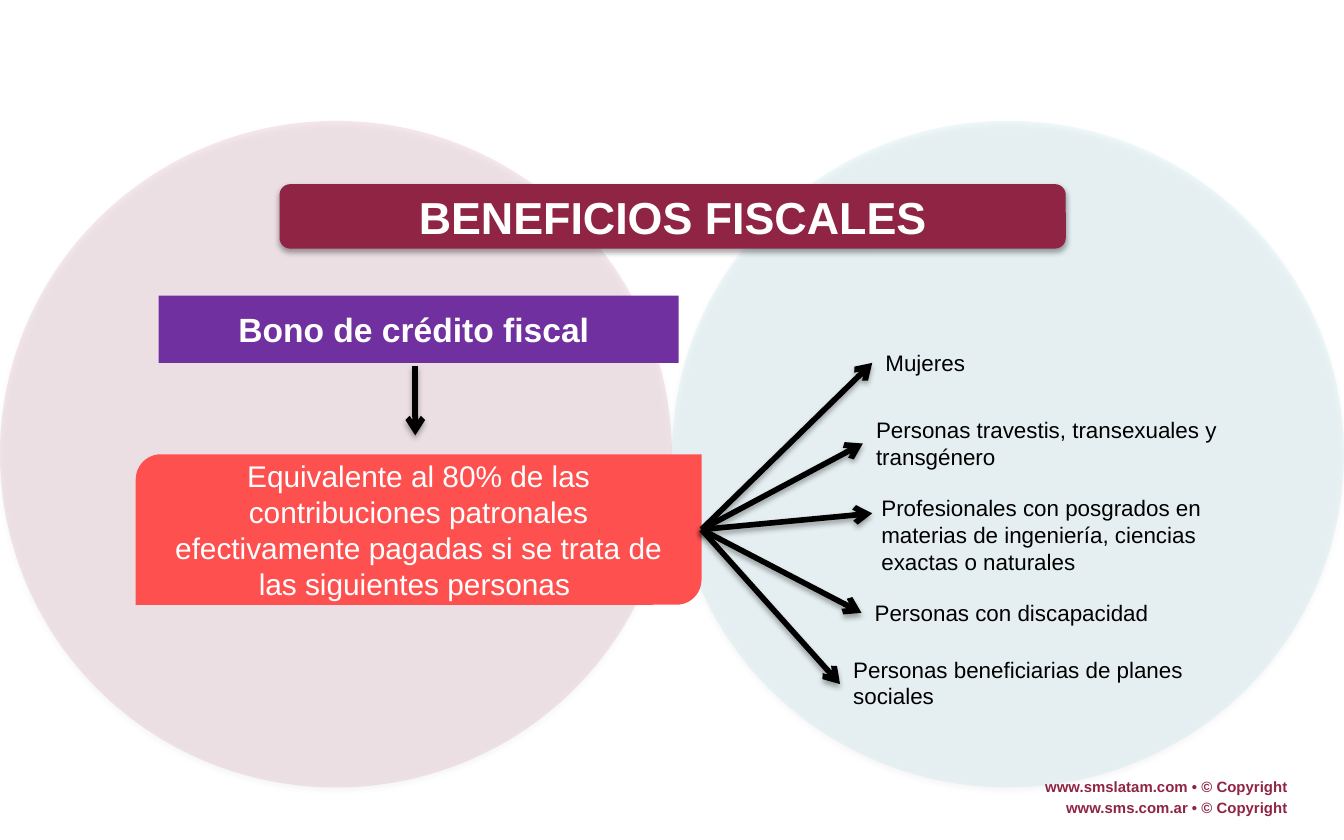
from dataclasses import dataclass
from typing import Optional

from lxml import etree
from pptx import Presentation
from pptx.dml.color import RGBColor
from pptx.enum.shapes import MSO_CONNECTOR, MSO_SHAPE
from pptx.enum.text import MSO_ANCHOR, PP_ALIGN
from pptx.oxml.ns import qn
from pptx.util import Pt

PX = 9144
STRAIGHT = MSO_CONNECTOR.STRAIGHT
ELLIPSE = MSO_SHAPE.OVAL
RECTANGLE = MSO_SHAPE.RECTANGLE
ROUNDED = MSO_SHAPE.ROUNDED_RECTANGLE
DIAGONAL = MSO_SHAPE.ROUND_2_DIAG_RECTANGLE
LEFT, CENTER, RIGHT = PP_ALIGN.LEFT, PP_ALIGN.CENTER, PP_ALIGN.RIGHT
TOP, MIDDLE = MSO_ANCHOR.TOP, MSO_ANCHOR.MIDDLE


@dataclass(frozen=True)
class Theme:
    font: str = "Arial"
    white: str = "FFFFFF"
    black: str = "000000"
    wine: str = "902444"
    purple: str = "7030A0"
    coral: str = "FF5050"
    rose: str = "A4244A"
    aqua: str = "61C1D1"
    title_size: int = 24
    heading_size: int = 18
    body_size: int = 16
    item_size: int = 12
    footer_size: int = 8
    arrow_width: int = 3


THEME = Theme()


@dataclass(frozen=True)
class Box:
    left: int
    top: int
    width: int
    height: int

    def emu(self) -> tuple[int, ...]:
        return tuple(v * PX for v in (self.left, self.top, self.width, self.height))


@dataclass(frozen=True)
class Shadow:
    opacity: int
    distance: float
    blur: float = 3.1


@dataclass(frozen=True)
class Panel:
    kind: int
    box: Box
    color: str
    opacity: int = 100
    shadow: Optional[Shadow] = None
    text: str = ""
    size: int = 0
    bold: bool = False


@dataclass(frozen=True)
class Beneficiary:
    text: str
    box: Box
    arrow_end: tuple[int, int]


CIRCLE_SHADOW = Shadow(38, 1.6)
RAISED_SHADOW = Shadow(35, 1.8)
HUB = (522, 394)

PANELS = [
    Panel(ELLIPSE, Box(0, 90, 500, 496), THEME.rose, 10, CIRCLE_SHADOW),
    Panel(ELLIPSE, Box(500, 90, 500, 496), THEME.aqua, 10, CIRCLE_SHADOW),
    Panel(RECTANGLE, Box(118, 220, 387, 50), THEME.purple,
          text="Bono de crédito fiscal ", size=THEME.heading_size, bold=True),
    Panel(ROUNDED, Box(208, 137, 585, 48), THEME.wine, shadow=RAISED_SHADOW,
          text="BENEFICIOS FISCALES", size=THEME.title_size, bold=True),
    Panel(DIAGONAL, Box(101, 338, 421, 112), THEME.coral,
          text="Equivalente al 80% de las contribuciones patronales efectivamente "
               "pagadas si se trata de las siguientes personas ",
          size=THEME.body_size),
]

BENEFICIARIES = [
    Beneficiary("Mujeres", Box(649, 255, 213, 30), (649, 270)),
    Beneficiary("Personas travestis, transexuales y transgénero",
                Box(642, 305, 333, 50), (642, 330)),
    Beneficiary("Profesionales con posgrados en materias de ingeniería, "
                "ciencias exactas o naturales",
                Box(646, 363, 313, 71), (649, 382)),
    Beneficiary("Personas con discapacidad", Box(641, 441, 313, 30), (641, 456)),
    Beneficiary("Personas beneficiarias de planes sociales",
                Box(625, 483, 313, 50), (625, 509)),
]

FOOTERS = ["www.smslatam.com • © Copyright", "www.sms.com.ar • © Copyright"]


def add_alpha(color_element, opacity: int) -> None:
    etree.SubElement(color_element, qn("a:alpha"), val=str(opacity * 1000))


def add_shadow(properties, shadow: Optional[Shadow]) -> None:
    effects = etree.SubElement(properties, qn("a:effectLst"))
    if shadow:
        outer = etree.SubElement(
            effects, qn("a:outerShdw"), blurRad=str(int(Pt(shadow.blur))),
            dist=str(int(Pt(shadow.distance))), dir="5400000", rotWithShape="0")
        color = etree.SubElement(outer, qn("a:srgbClr"), val=THEME.black)
        add_alpha(color, shadow.opacity)


def write(frame, text: str, *, size: int, color: str, bold: bool = False,
          align: int = LEFT, anchor: int = TOP) -> None:
    frame.word_wrap = True
    frame.vertical_anchor = anchor
    paragraph = frame.paragraphs[0]
    paragraph.alignment = align
    run = paragraph.add_run()
    run.text = text
    run.font.name = THEME.font
    run.font.size = Pt(size)
    run.font.bold = bold
    run.font.color.rgb = RGBColor.from_string(color)


def draw_panel(slide, panel: Panel) -> None:
    shape = slide.shapes.add_shape(panel.kind, *panel.box.emu())
    shape.fill.solid()
    shape.fill.fore_color.rgb = RGBColor.from_string(panel.color)
    shape.line.fill.background()
    properties = shape.element.spPr
    if panel.opacity < 100:
        add_alpha(properties.find(qn("a:solidFill"))[0], panel.opacity)
    add_shadow(properties, panel.shadow)
    if panel.text:
        write(shape.text_frame, panel.text, size=panel.size, color=THEME.white,
              bold=panel.bold, align=CENTER, anchor=MIDDLE)


def draw_arrow(slide, start: tuple[int, int], end: tuple[int, int]) -> None:
    arrow = slide.shapes.add_connector(STRAIGHT, *(v * PX for v in start + end))
    arrow.line.width = Pt(THEME.arrow_width)
    arrow.line.color.rgb = RGBColor.from_string(THEME.black)
    properties = arrow.element.spPr
    etree.SubElement(properties.find(qn("a:ln")), qn("a:tailEnd"), type="arrow")
    add_shadow(properties, RAISED_SHADOW)


def draw_text(slide, text: str, box: Box, **style) -> None:
    write(slide.shapes.add_textbox(*box.emu()).text_frame, text, **style)


def main() -> None:
    deck = Presentation()
    deck.slide_width, deck.slide_height = 1000 * PX, 625 * PX
    slide = deck.slides.add_slide(deck.slide_layouts[6])
    for row, footer in enumerate(FOOTERS):
        draw_text(slide, footer, Box(754, 574 + 15 * row, 214, 24),
                  size=THEME.footer_size, color=THEME.wine, bold=True, align=RIGHT)
    for panel in PANELS:
        draw_panel(slide, panel)
    draw_arrow(slide, (309, 272), (309, 324))
    for beneficiary in BENEFICIARIES:
        draw_arrow(slide, HUB, beneficiary.arrow_end)
        draw_text(slide, beneficiary.text, beneficiary.box,
                  size=THEME.item_size, color=THEME.black)
    deck.save("out.pptx")


if __name__ == "__main__":
    main()
